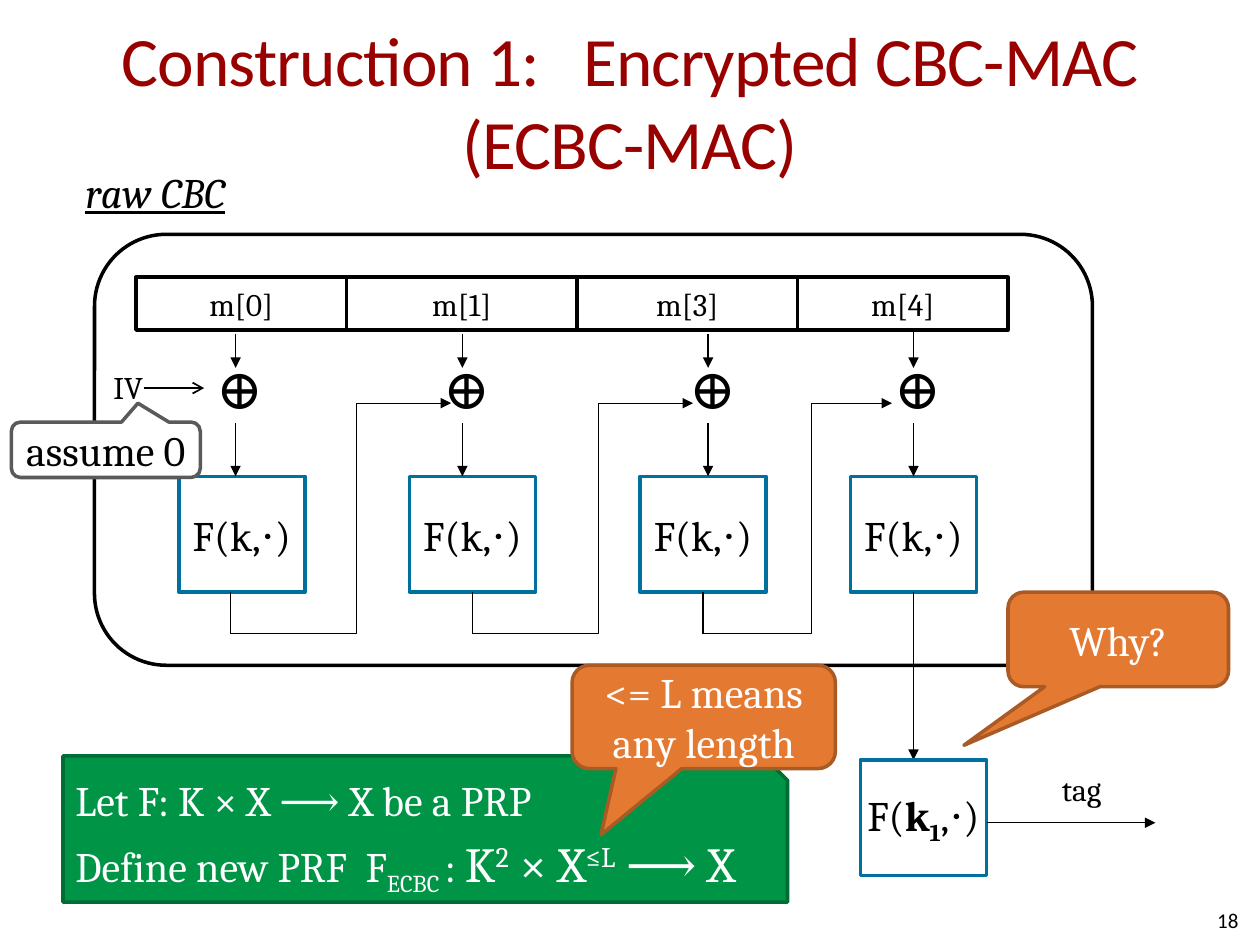
from dataclasses import dataclass
from typing import Optional

from lxml.etree import SubElement
from pptx import Presentation
from pptx.dml.color import RGBColor
from pptx.enum.shapes import MSO_CONNECTOR, MSO_SHAPE as SHAPE
from pptx.enum.text import MSO_ANCHOR as ANCHOR, MSO_AUTO_SIZE as AUTO, PP_ALIGN as ALIGN
from pptx.oxml.ns import qn
from pptx.util import Emu, Pt

PX = 9144
BLACK, WHITE, BLUE = "000000", "FFFFFF", "00709E"
ORANGE, BROWN = "E47932", "A95A25"
BOX_TOP, BOX_W, BOX_H = 378, 100, 92
MSG_TOP, MSG_H = 220, 42
LOOP_TOP, LOOP_BOTTOM = 320, 503


@dataclass
class Run:
    text: str
    size: float = 24
    bold: bool = False
    italic: bool = False
    underline: bool = False
    base: int = 0
    spacing: int = 0


@dataclass
class Style:
    color: str = BLACK
    font: str = "Cambria"
    align: ALIGN = ALIGN.CENTER
    anchor: ANCHOR = ANCHOR.MIDDLE
    wrap: bool = False
    inset: tuple[int, int] = (10, 5)
    before: float = 0
    grow: bool = False


@dataclass
class Block:
    label: str
    msg_x: int
    msg_w: int
    box_x: int
    xor_x: int
    arrow_x: int
    arrow_top: int
    loop: tuple[int, ...] = ()


@dataclass
class Callout:
    text: str
    at: tuple[int, int, int, int]
    adj: tuple[float, float]
    fill: str
    line: str
    color: str


BLOCKS = [
    Block("m[0]", 108, 167, 142, 162, 187, 265, (183, 283, 358)),
    Block("m[1]", 275, 183, 325, 342, 367, 265, (375, 475, 550)),
    Block("m[3]", 458, 175, 508, 537, 562, 265, (558, 644, 708)),
    Block("m[4]", 633, 167, 675, 700, 725, 261),
]
CALLOUTS = [
    Callout("Why?", (800, 470, 175, 75), (-0.7, 1.12), ORANGE, BROWN, WHITE),
    Callout("<= L means any length", (454, 528, 209, 82), (-0.39, 1.14), ORANGE, BROWN, WHITE),
    Callout("assume 0", (9, 335, 150, 44), (0.17, -0.84), WHITE, "595A5A", BLACK),
]
LABEL = Style(align=ALIGN.LEFT, anchor=ANCHOR.TOP, grow=True)


def px(n: int) -> Emu:
    return Emu(n * PX)


def rgb(color: str) -> RGBColor:
    return RGBColor.from_string(color)


def write(sp, paras: list[list[Run]], st: Style) -> None:
    tf = sp.text_frame
    tf.word_wrap = st.wrap
    tf.auto_size = AUTO.SHAPE_TO_FIT_TEXT if st.grow else AUTO.NONE
    tf.vertical_anchor = st.anchor
    tf.margin_left = tf.margin_right = px(st.inset[0])
    tf.margin_top = tf.margin_bottom = px(st.inset[1])
    for i, runs in enumerate(paras):
        p = tf.add_paragraph() if i else tf.paragraphs[0]
        p.alignment = st.align
        p.space_before = Pt(st.before)
        for run in runs:
            if run.text == "\n":
                p.add_line_break()
                continue
            r = p.add_run()
            r.text = run.text
            f = r.font
            f.name, f.size = st.font, Pt(run.size)
            f.bold, f.italic, f.underline = run.bold, run.italic, run.underline
            f.color.rgb = rgb(st.color)
            rpr = r._r.get_or_add_rPr()
            if run.base:
                rpr.set("baseline", str(run.base * 1000))
            if run.spacing:
                rpr.set("spc", str(run.spacing))


def text(s, at: tuple[int, int, int, int], runs: list[Run], st: Style) -> None:
    write(s.shapes.add_textbox(*map(px, at)), [runs], st)


def shape(s, kind: SHAPE, at: tuple[int, int, int, int], fill: str, line: str):
    sp = s.shapes.add_shape(kind, *map(px, at))
    sp.shadow.inherit = False
    sp.fill.solid()
    sp.fill.fore_color.rgb = rgb(fill)
    sp.line.color.rgb = rgb(line)
    sp.line.width = Pt(2)
    return sp


def box(s, at: tuple[int, int, int, int], line: str, runs: list[Run]):
    sp = shape(s, SHAPE.RECTANGLE, at, WHITE, line)
    write(sp, [runs], Style())
    return sp


def stroke(sp, width: float, head: Optional[str]) -> None:
    sp.line.color.rgb = rgb(BLACK)
    sp.line.width = Pt(width)
    if head:
        SubElement(sp.line._get_or_add_ln(), qn("a:tailEnd"), type=head)


def line(s, x1: int, y1: int, x2: int, y2: int,
         head: Optional[str] = "triangle", width: float = 0.75):
    cx = s.shapes.add_connector(MSO_CONNECTOR.STRAIGHT, *map(px, (x1, y1, x2, y2)))
    stroke(cx, width, head)
    SubElement(cx._element.spPr, qn("a:effectLst"))
    return cx


def feedback(s, x1: int, x2: int, x3: int) -> None:
    fb = s.shapes.build_freeform(x1, LOOP_BOTTOM, scale=PX)
    fb.add_line_segments([(x2, LOOP_BOTTOM), (x2, LOOP_TOP), (x3, LOOP_TOP)], close=False)
    sp = fb.convert_to_shape()
    sp.shadow.inherit = False
    sp.fill.background()
    stroke(sp, 0.75, "triangle")


def draw_block(s, b: Block):
    bottom, mid = BOX_TOP + BOX_H, b.box_x + BOX_W // 2
    sp = box(s, (b.box_x, BOX_TOP, BOX_W, BOX_H), BLUE, [Run("F(k,⋅)")])
    box(s, (b.msg_x, MSG_TOP, b.msg_w, MSG_H), BLACK, [Run(b.label, 18)])
    text(s, (b.xor_x, 276, 55, 64), [Run("⊕", 32)], LABEL)
    line(s, b.arrow_x, b.arrow_top, b.arrow_x, 292)
    cx = line(s, b.arrow_x, 336, b.arrow_x, BOX_TOP)
    if b.arrow_x == mid:
        cx.end_connect(sp, 0)
    if b.loop:
        x = b.loop[0]
        cx = line(s, x, bottom, x, LOOP_BOTTOM, None)
        if x == mid:
            cx.begin_connect(sp, 2)
        feedback(s, *b.loop)
    return sp


def draw_callout(s, c: Callout) -> None:
    sp = shape(s, SHAPE.ROUNDED_RECTANGULAR_CALLOUT, c.at, c.fill, c.line)
    sp.adjustments[0], sp.adjustments[1] = c.adj
    write(sp, [[Run(c.text)]], Style(c.color, wrap=True, inset=(0, 0)))


def main() -> None:
    prs = Presentation()
    prs.slide_width, prs.slide_height = px(1000), px(750)
    s = prs.slides.add_slide(prs.slide_layouts[6])

    shape(s, SHAPE.ROUNDED_RECTANGLE, (75, 186, 792, 342), WHITE, BLACK)
    text(s, (58, 127, 148, 51), [Run("raw CBC", italic=True, underline=True)], LABEL)
    title = [Run(t, 39.6, spacing=-50)
             for t in ("Construction 1:   Encrypted CBC-MAC", "\n", "(ECBC-MAC)")]
    text(s, (50, 17, 900, 125), title, Style("990000", "Calibri", wrap=True, inset=(0, 5)))

    boxes = [draw_block(s, b) for b in BLOCKS]
    line(s, 725, 470, 725, 603).begin_connect(boxes[-1], 2)
    box(s, (683, 603, BOX_W, BOX_H), BLUE,
        [Run("F("), Run("k", bold=True), Run("1", bold=True, base=-25), Run(",⋅)")])
    line(s, 783, 653, 917, 653)
    text(s, (833, 606, 54, 40), [Run("tag", 18)], LABEL)

    definition = shape(s, SHAPE.SNIP_1_RECTANGLE, (50, 600, 575, 116), "009446", "006D34")
    write(definition, [
        [Run("Let F: K × X ⟶ X be a PRP")],
        [Run("Define new PRF  F"), Run("ECBC ", base=-25), Run(": "), Run("K", 28),
         Run("2", 28, base=30), Run(" × X", 28), Run("≤L", 28, base=30), Run(" ⟶ X", 28)],
    ], Style(WHITE, align=ALIGN.LEFT, anchor=ANCHOR.TOP, before=5, grow=True))

    text(s, (90, 292, 24, 30), [Run("IV", 18)],
         Style(align=ALIGN.LEFT, anchor=ANCHOR.TOP, inset=(0, 0), grow=True))
    line(s, 114, 308, 162, 308, "arrow", 1)
    for c in CALLOUTS:
        draw_callout(s, c)
    text(s, (750, 710, 233, 40), [Run("18", 12)],
         Style(font="Calibri", align=ALIGN.RIGHT, wrap=True, inset=(0, 0)))
    prs.save("out.pptx")


if __name__ == "__main__":
    main()
